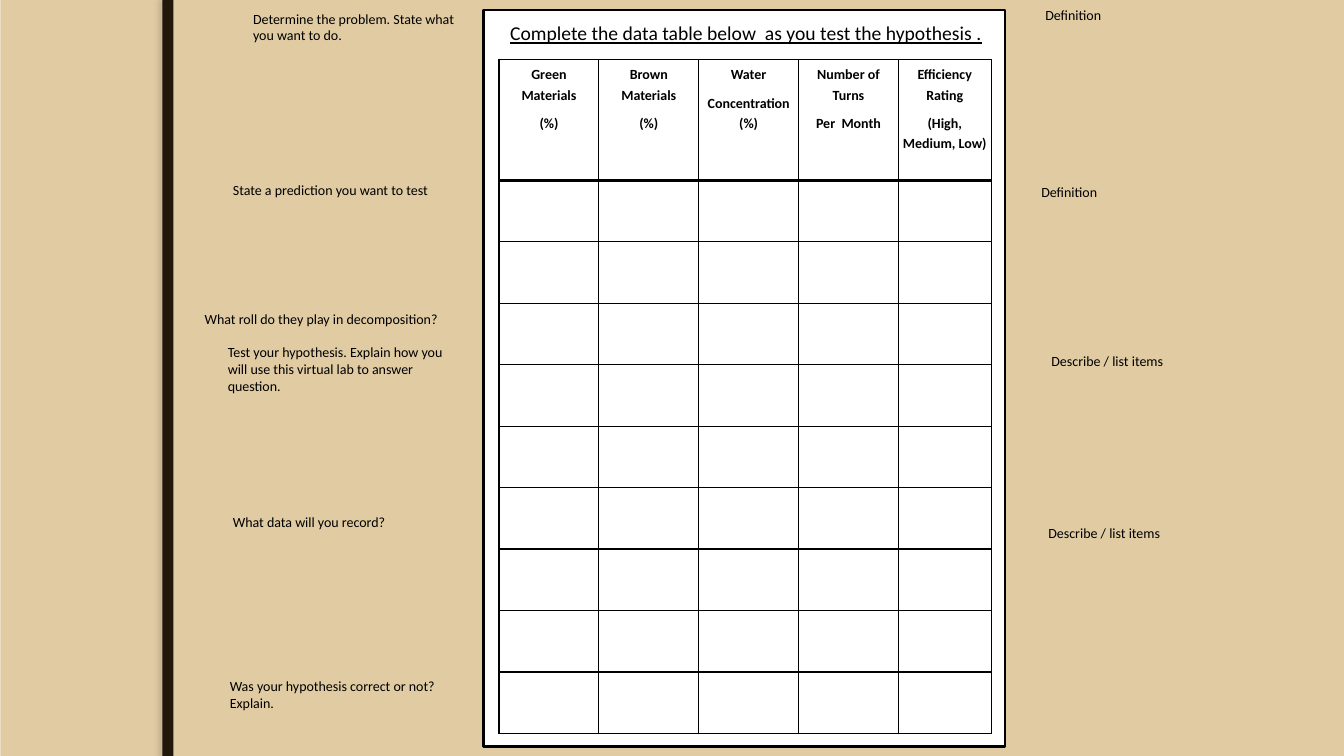
from dataclasses import dataclass

from pptx import Presentation
from pptx.dml.color import RGBColor as Rgb
from pptx.enum.shapes import MSO_SHAPE as Kind
from pptx.enum.text import PP_ALIGN as Align
from pptx.oxml import parse_xml
from pptx.oxml.ns import nsdecls
from pptx.util import Inches, Pt


@dataclass(frozen=True)
class Theme:
    font: str = "Calibri"
    back: str = "EBDDC3"
    sand: str = "E0CBA3"
    bar: str = "20190B"
    shade: str = "766E60"
    ink: str = "000000"
    white: str = "FFFFFF"
    body: int = 10
    title: int = 14
    thin: float = 1
    thick: float = 2.25
    frame: float = 2


T = Theme()
WIDE, HIGH = Inches(13.33), Inches(7.5)
PAD = Inches(0.04)

NOTES = [
    ("What roll do they play in decomposition?", 14.93, 40.57, 19, 3.5),
    ("Determine the problem. State what you want to do.", 18.53, 0.8, 16.95, 12.8),
    ("State a prediction you want to test", 17.03, 23.47, 17.33, 16),
    ("Test your hypothesis. Explain how you will use this virtual lab to answer question.",
     16.65, 44.93, 17.7, 19.2),
    ("What data will you record?", 17.03, 67.33, 16.65, 18.53),
    ("Was your hypothesis correct or not? Explain.", 16.8, 89.07, 16.65, 10.93),
    ("Definition", 77.48, 0.27, 17.48, 18.93),
    ("Definition", 77.18, 23.73, 16.35, 16.27),
    ("Describe / list items", 77.93, 46.13, 15.6, 13.33),
    ("Describe / list items", 77.7, 68.8, 15.68, 14.13),
]
HEADS = [
    ("Green Materials", "(%)"),
    ("Brown Materials", "(%)"),
    ("Water", "Concentration (%)"),
    ("Number of Turns", "Per  Month"),
    ("Efficiency Rating", "(High, Medium, Low)"),
]
COLS = [7.43] * 4 + [6.9]
ROWS = [16] + [8.13] * 9


def across(share):
    return round(WIDE * share / 100)


def down(share):
    return round(HIGH * share / 100)


def place(x, y, w, h):
    return across(x), down(y), across(w), down(h)


def ink(fill, tone):
    fill.solid()
    fill.fore_color.rgb = Rgb.from_string(tone)


def write(para, text, size=T.body, bold=False, under=False):
    run = para.add_run()
    run.text = text
    font = run.font
    font.name, font.size = T.font, Pt(size)
    font.bold, font.underline = bold, under
    font.color.rgb = Rgb.from_string(T.ink)


def panel(slide, box, tone, edge=0):
    shape = slide.shapes.add_shape(Kind.RECTANGLE, *place(*box))
    shape.shadow.inherit = False
    ink(shape.fill, tone)
    if edge:
        ink(shape.line.fill, T.ink)
        shape.line.width = Pt(edge)
    else:
        shape.line.fill.background()
    return shape


def shade(shape):
    shape.shadow.inherit = True
    shape._element.spPr.append(parse_xml(
        f'<a:effectLst {nsdecls("a")}><a:outerShdw blurRad="{Pt(3)}" dist="{Pt(3)}" '
        f'dir="10800000"><a:srgbClr val="{T.shade}"><a:alpha val="25000"/>'
        '</a:srgbClr></a:outerShdw></a:effectLst>'))


def note(slide, text, box, **look):
    frame = slide.shapes.add_textbox(*place(*box)).text_frame
    frame.word_wrap = True
    frame.margin_left = frame.margin_right = PAD
    frame.margin_top = frame.margin_bottom = PAD
    write(frame.paragraphs[0], text, **look)


def border(cell, top, bottom):
    props = cell._tc.get_or_add_tcPr()
    sides = {"L": T.thin, "R": T.thin, "T": top, "B": bottom}
    for spot, (side, size) in enumerate(sides.items()):
        props.insert(spot, parse_xml(
            f'<a:ln{side} {nsdecls("a")} w="{Pt(size)}"><a:solidFill>'
            f'<a:srgbClr val="{T.ink}"/></a:solidFill></a:ln{side}>'))


def head(cell, lines):
    frame = cell.text_frame
    for spot, line in enumerate(lines):
        para = frame.add_paragraph() if spot else frame.paragraphs[0]
        para.alignment = Align.CENTER
        para.line_spacing = 1.19
        para.space_after = Pt(6)
        write(para, line, bold=True)


def grid(slide, x, y):
    box = place(x, y, sum(COLS), sum(ROWS))
    table = slide.shapes.add_table(len(ROWS), len(COLS), *box).table
    for col, share in zip(table.columns, COLS):
        col.width = across(share)
    for spot, (row, share) in enumerate(zip(table.rows, ROWS)):
        row.height = down(share)
        top = T.thick if spot == 1 else T.thin
        bottom = T.thick if spot == 0 else T.thin
        for cell in row.cells:
            cell.margin_left = cell.margin_right = PAD
            cell.margin_top = cell.margin_bottom = PAD
            ink(cell.fill, T.white)
            border(cell, top, bottom)
    for cell, lines in zip(table.rows[0].cells, HEADS):
        head(cell, lines)


def main():
    deck = Presentation()
    deck.slide_width, deck.slide_height = WIDE, HIGH
    slide = deck.slides.add_slide(deck.slide_layouts[6])
    ink(slide.background.fill, T.back)
    panel(slide, (0.08, 0, 99.92, 100), T.sand)
    shade(panel(slide, (12.08, 0, 0.82, 100), T.bar))
    for text, *box in NOTES:
        note(slide, text, box)
    panel(slide, (36, 1.33, 38.78, 97.47), T.white, T.frame)
    note(slide, "Complete the data table below  as you test the hypothesis .",
         (37.65, 2.27, 36.15, 5.6), size=T.title, under=True)
    grid(slide, 37.13, 7.87)
    deck.save("out.pptx")


if __name__ == "__main__":
    main()
